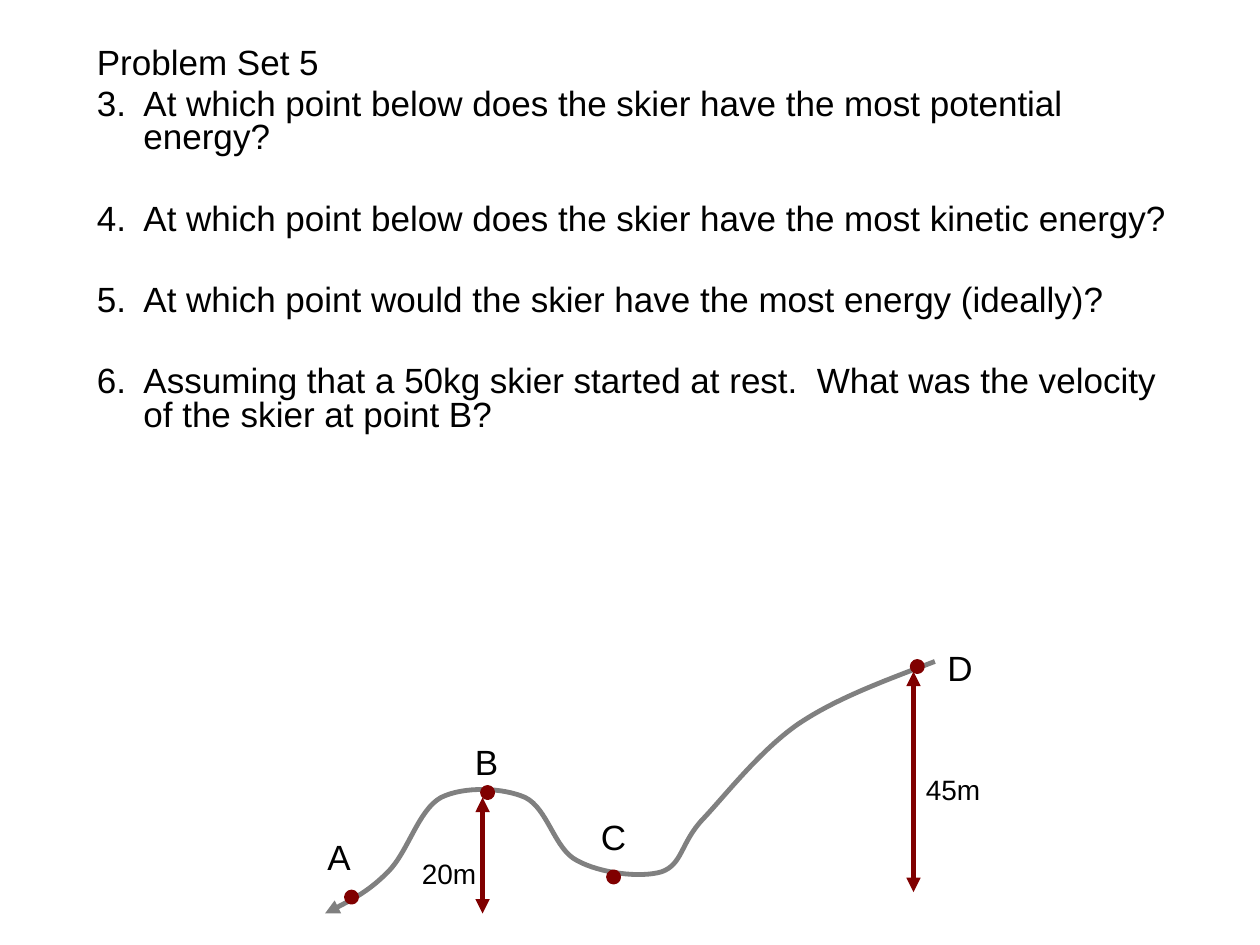
from typing import NamedTuple

from lxml.etree import SubElement
from pptx import Presentation
from pptx.dml.color import RGBColor
from pptx.enum.shapes import MSO_CONNECTOR as Link, MSO_SHAPE as Form
from pptx.oxml.ns import qn
from pptx.util import Inches, Pt

BLACK = RGBColor(0x00, 0x00, 0x00)
GRAY = RGBColor(0x80, 0x80, 0x80)
RED = RGBColor(0x80, 0x00, 0x00)
FONT = "Arial"
STROKE = Pt(2.75)
DOT = 0.08
HANG = 0.37
GAP = 3.8
WIDE = 27.2
GRID = 1000  # path units to the inch; path points are whole numbers


class Line(NamedTuple):
    text: str
    before: float


class Label(NamedTuple):
    text: str
    left: float
    top: float
    width: float
    height: float
    size: int


class Height(NamedTuple):
    x: float
    base: float
    top: float


LINES = [
    Line("Problem Set 5", 0),
    Line("3.\tAt which point below does the skier have the most potential energy?", GAP),
    Line("4.\tAt which point below does the skier have the most kinetic energy?", WIDE),
    Line("5.\tAt which point would the skier have the most energy (ideally)?", WIDE),
    Line("6.\tAssuming that a 50kg skier started at rest.  "
         "What was the velocity of the skier at point B?", WIDE),
]

START = (7.42, 5.25)
# Each curve: first control point, second control point, end point
CURVES = [
    ((7.03, 5.40), (6.64, 5.54), (6.33, 5.75)),
    ((6.03, 5.96), (5.76, 6.31), (5.58, 6.50)),
    ((5.40, 6.69), (5.42, 6.86), (5.25, 6.92)),
    ((5.08, 6.97), (4.76, 6.93), (4.58, 6.83)),
    ((4.40, 6.74), (4.35, 6.42), (4.17, 6.33)),
    ((3.99, 6.25), (3.68, 6.24), (3.50, 6.33)),
    ((3.32, 6.43), (3.24, 6.76), (3.08, 6.92)),
    ((2.93, 7.07), (2.76, 7.16), (2.58, 7.25)),
]
DOTS = [(7.24, 5.25), (4.83, 6.92), (3.83, 6.25), (2.75, 7.08)]
LABELS = [
    Label("D", 7.42, 5.08, 0.58, 0.43, 20),
    Label("B", 3.67, 5.83, 0.58, 0.43, 20),
    Label("C", 4.67, 6.42, 0.58, 0.43, 20),
    Label("A", 2.50, 6.58, 0.58, 0.43, 20),
    Label("20m", 3.25, 6.75, 0.83, 0.37, 16),
    Label("45m", 7.25, 6.08, 0.83, 0.37, 16),
]
HEIGHTS = [Height(3.83, 7.25, 6.33), Height(7.25, 7.08, 5.33)]


def add_run(para, text: str, size: int) -> None:
    run = para.add_run()
    run.text = text
    run.font.name = FONT
    run.font.size = Pt(size)
    run.font.color.rgb = BLACK


def add_box(slide, left: float, top: float, width: float, height: float):
    box = slide.shapes.add_textbox(Inches(left), Inches(top), Inches(width), Inches(height))
    box.text_frame.word_wrap = True
    return box.text_frame


def add_body(slide) -> None:
    frame = add_box(slide, 0.67, 0.34, 8.83, 3.5)
    for i, line in enumerate(LINES):
        para = frame.add_paragraph() if i else frame.paragraphs[0]
        para.line_spacing = 0.8
        para.space_before = Pt(line.before)
        props = para._p.get_or_add_pPr()
        props.set("marL", str(Inches(HANG)))
        props.set("indent", str(-Inches(HANG)))
        add_run(para, line.text, 20)


def set_line(shape, color: RGBColor, *ends: str) -> None:
    """Style the stroke and put a triangle on each named end."""
    shape.line.color.rgb = color
    shape.line.width = STROKE
    stroke = shape.line._get_or_add_ln()
    for end in ends:
        SubElement(stroke, qn(f"a:{end}"), type="triangle")


def to_grid(spot: tuple[float, float]) -> tuple[int, int]:
    x, y = spot
    return round(x * GRID), round(y * GRID)


def add_slope(slide) -> None:
    """Draw the hill, turning each three line steps into one Bezier curve."""
    pen = slide.shapes.build_freeform(*to_grid(START), scale=Inches(1) / GRID)
    pen.add_line_segments([to_grid(spot) for curve in CURVES for spot in curve], close=False)
    hill = pen.convert_to_shape()
    hill.shadow.inherit = False
    hill.fill.background()
    set_line(hill, GRAY, "tailEnd")
    path = next(hill._element.iter(qn("a:path")))
    steps = path.findall(qn("a:lnTo"))
    for i in range(0, len(steps), 3):
        bend = SubElement(path, qn("a:cubicBezTo"))
        for step in steps[i:i + 3]:
            bend.append(step[0])
            path.remove(step)


def add_dot(slide, left: float, top: float) -> None:
    dot = slide.shapes.add_shape(
        Form.OVAL, Inches(left), Inches(top), Inches(DOT), Inches(DOT))
    dot.shadow.inherit = False
    dot.fill.solid()
    dot.fill.fore_color.rgb = RED
    set_line(dot, RED)


def add_label(slide, label: Label) -> None:
    frame = add_box(slide, label.left, label.top, label.width, label.height)
    add_run(frame.paragraphs[0], label.text, label.size)


def add_height(slide, mark: Height) -> None:
    arrow = slide.shapes.add_connector(
        Link.STRAIGHT, Inches(mark.x), Inches(mark.base), Inches(mark.x), Inches(mark.top))
    set_line(arrow, RED, "headEnd", "tailEnd")
    SubElement(arrow._element.spPr, qn("a:effectLst"))


def main() -> None:
    deck = Presentation()
    deck.slide_width, deck.slide_height = Inches(10), Inches(7.5)
    slide = deck.slides.add_slide(deck.slide_layouts[6])
    add_body(slide)
    add_slope(slide)
    for left, top in DOTS:
        add_dot(slide, left, top)
    for label in LABELS:
        add_label(slide, label)
    for mark in HEIGHTS:
        add_height(slide, mark)
    deck.save("out.pptx")


if __name__ == "__main__":
    main()
